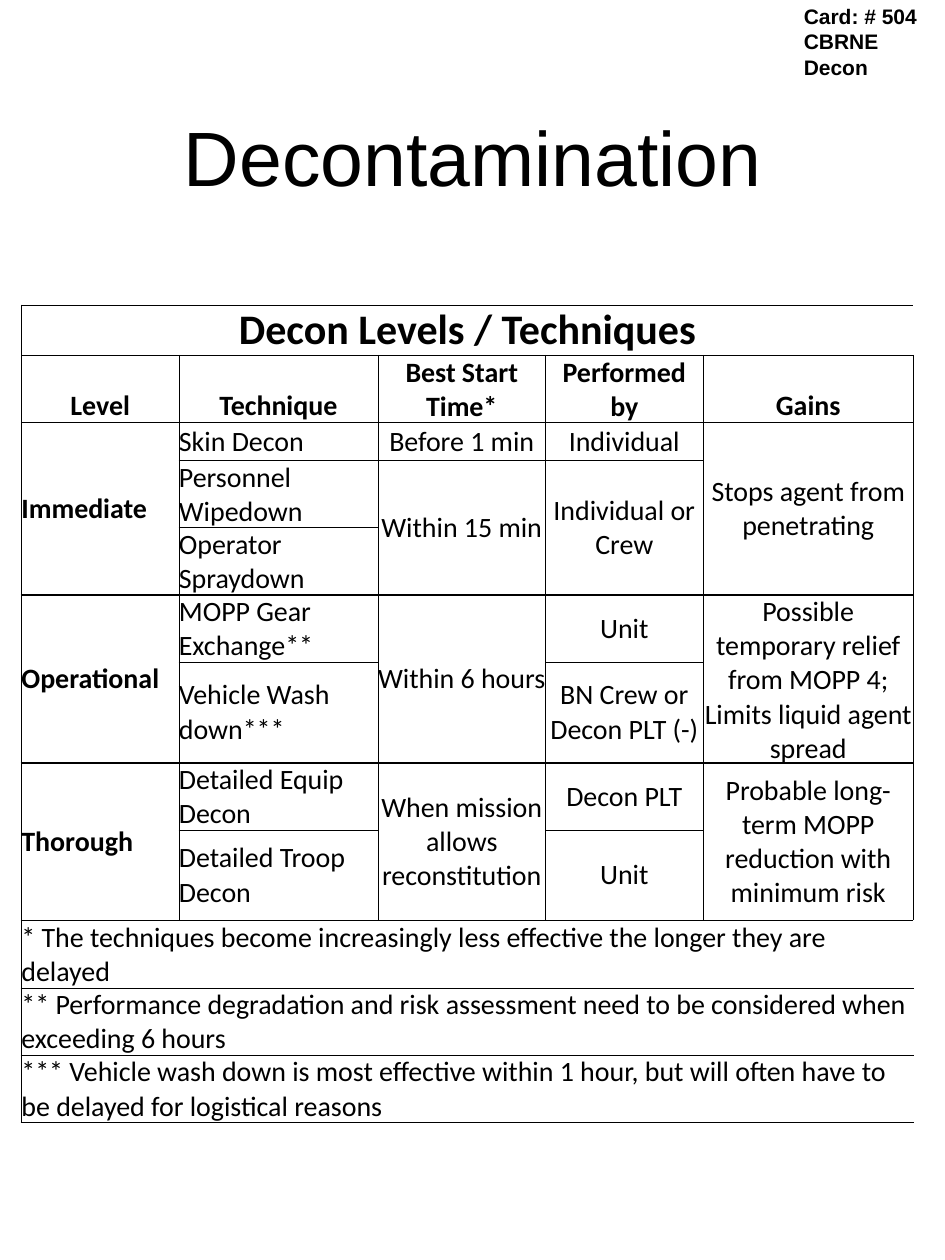
from lxml import etree
from pptx import Presentation
from pptx.dml.color import RGBColor
from pptx.enum import text
from pptx.oxml import ns
from pptx.util import Inches, Pt

LEFT, CENTER = text.PP_ALIGN.LEFT, text.PP_ALIGN.CENTER
TOP, MIDDLE, BOTTOM = (text.MSO_ANCHOR.TOP, text.MSO_ANCHOR.MIDDLE,
                       text.MSO_ANCHOR.BOTTOM)

COL_WIDTHS = [1.25, 1.58, 1.33, 1.25, 1.67]
ROW_HEIGHTS = [0.37, 0.53, 0.3, 0.3, 0.31, 0.3, 0.77, 0.3, 0.72, 0.3, 0.53, 0.53]
HEADINGS = ["Level", "Technique", "Best Start Time*", "Performed by", "Gains"]
BODY_ROW = 2
SECTION_ROWS = (2, 5, 7, 9, 12)

# row, column, rows spanned, text
BODY = [
    (2, 0, 3, "Immediate"),
    (2, 1, 1, "Skin Decon"),
    (2, 2, 1, "Before 1 min"),
    (2, 3, 1, "Individual"),
    (2, 4, 3, "Stops agent from penetrating"),
    (3, 1, 1, "Personnel Wipedown"),
    (3, 2, 2, "Within 15 min"),
    (3, 3, 2, "Individual or Crew"),
    (4, 1, 1, "Operator Spraydown"),
    (5, 0, 2, "Operational"),
    (5, 1, 1, "MOPP Gear Exchange**"),
    (5, 2, 2, "Within 6 hours"),
    (5, 3, 1, "Unit"),
    (5, 4, 2, "Possible temporary relief from MOPP 4; Limits liquid agent spread"),
    (6, 1, 1, "Vehicle Wash down***"),
    (6, 3, 1, "BN Crew or Decon PLT (-)"),
    (7, 0, 2, "Thorough"),
    (7, 1, 1, "Detailed Equip Decon"),
    (7, 2, 2, "When mission allows reconstitution"),
    (7, 3, 1, "Decon PLT"),
    (7, 4, 2, "Probable long-term MOPP reduction with minimum risk"),
    (8, 1, 1, "Detailed Troop Decon"),
    (8, 3, 1, "Unit"),
]
NOTES = [
    "* The techniques become increasingly less effective the longer they are delayed",
    "** Performance degradation and risk assessment need to be considered "
    "when exceeding 6 hours",
    "*** Vehicle wash down is most effective within 1 hour, but will often "
    "have to be delayed for logistical reasons",
]


def rgb(value):
    return RGBColor.from_string(value)


class Card:
    """Holds the style and the current slide."""

    ink = "000000"
    thin, thick = 0.5, 1

    def __init__(self, prs):
        self.s = prs.slides.add_slide(prs.slide_layouts[6])

    def set_text(self, tf, words, align=LEFT, **font):
        p = tf.paragraphs[0]
        p.text = words
        p.alignment = align
        for r in p.runs:
            for name, value in font.items():
                setattr(r.font, name, value)
            r.font.color.rgb = rgb(self.ink)

    def text_box(self, box, words, anchor=TOP, insets=(0.1, 0.05), **style):
        tf = self.s.shapes.add_textbox(*map(Inches, box)).text_frame
        x, y = map(Inches, insets)
        frame = {"word_wrap": True, "vertical_anchor": anchor, "margin_left": x,
                 "margin_right": x, "margin_top": y, "margin_bottom": y}
        for name, value in frame.items():
            setattr(tf, name, value)
        self.set_text(tf, words, name="Arial", **style)

    def table(self, left, top, widths, heights):
        box = (left, top, sum(widths), sum(heights))
        self.tbl = self.s.shapes.add_table(
            len(heights), len(widths), *map(Inches, box)).table
        self.tbl.first_row = self.tbl.horz_banding = False
        for col, width in zip(self.tbl.columns, widths):
            col.width = Inches(width)
        for row, height in zip(self.tbl.rows, heights):
            row.height = Inches(height)

    def cell(self, row, col, words, rows=1, cols=1, anchor=MIDDLE, size=16, **style):
        end_row, end_col = row + rows, col + cols
        origin = self.tbl.cell(row, col)
        if rows * cols > 1:
            origin.merge(self.tbl.cell(end_row - 1, end_col - 1))
        origin.vertical_anchor = anchor
        for side in ("left", "right", "top", "bottom"):
            setattr(origin, "margin_" + side, 0)
        self.set_text(origin.text_frame, words, name="Calibri", size=Pt(size), **style)
        body = row >= BODY_ROW
        edges = {
            "lnL": body and col == 0,
            "lnR": body and end_col == len(self.tbl.columns),
            "lnT": row in SECTION_ROWS,
            "lnB": end_row in SECTION_ROWS,
        }
        for y in range(row, end_row):
            for x in range(col, end_col):
                outer = {"lnL": x == col, "lnR": x == end_col - 1,
                         "lnT": y == row, "lnB": y == end_row - 1}
                part = self.tbl.cell(y, x)
                for tag, heavy in edges.items():
                    if outer[tag]:
                        self.border(part, tag, self.thick if heavy else self.thin)
                part.fill.background()

    def border(self, cell, tag, width):
        tc_pr = cell._tc.get_or_add_tcPr()
        ln = etree.SubElement(tc_pr, ns.qn("a:" + tag), w=str(Pt(width)))
        fill = etree.SubElement(ln, ns.qn("a:solidFill"))
        etree.SubElement(fill, ns.qn("a:srgbClr"), val=self.ink)


def main():
    prs = Presentation()
    prs.slide_width, prs.slide_height = Inches(7.5), Inches(10)
    card = Card(prs)
    card.text_box((0.38, 0.4, 6.75, 1.67), "Decontamination", anchor=MIDDLE,
                  align=CENTER, size=Pt(44))
    card.text_box((6.33, 0, 1.17, 0.83), "Card: # 504\nCBRNE Decon",
                  insets=(0.05, 0.03), size=Pt(12), bold=True)

    card.table(0.17, 2.42, COL_WIDTHS, ROW_HEIGHTS)
    header = {"anchor": BOTTOM, "align": CENTER, "bold": True}
    full = len(COL_WIDTHS)
    card.cell(0, 0, "Decon Levels / Techniques", cols=full, size=24, **header)
    for col, heading in enumerate(HEADINGS):
        card.cell(1, col, heading, **header)
    for row, col, rows, words in BODY:
        card.cell(row, col, words, rows=rows, bold=col == 0,
                  align=LEFT if col < 2 else CENTER)
    for row, note in enumerate(NOTES, start=9):
        card.cell(row, 0, note, cols=full, bold=False)
    prs.save("out.pptx")


if __name__ == "__main__":
    main()
